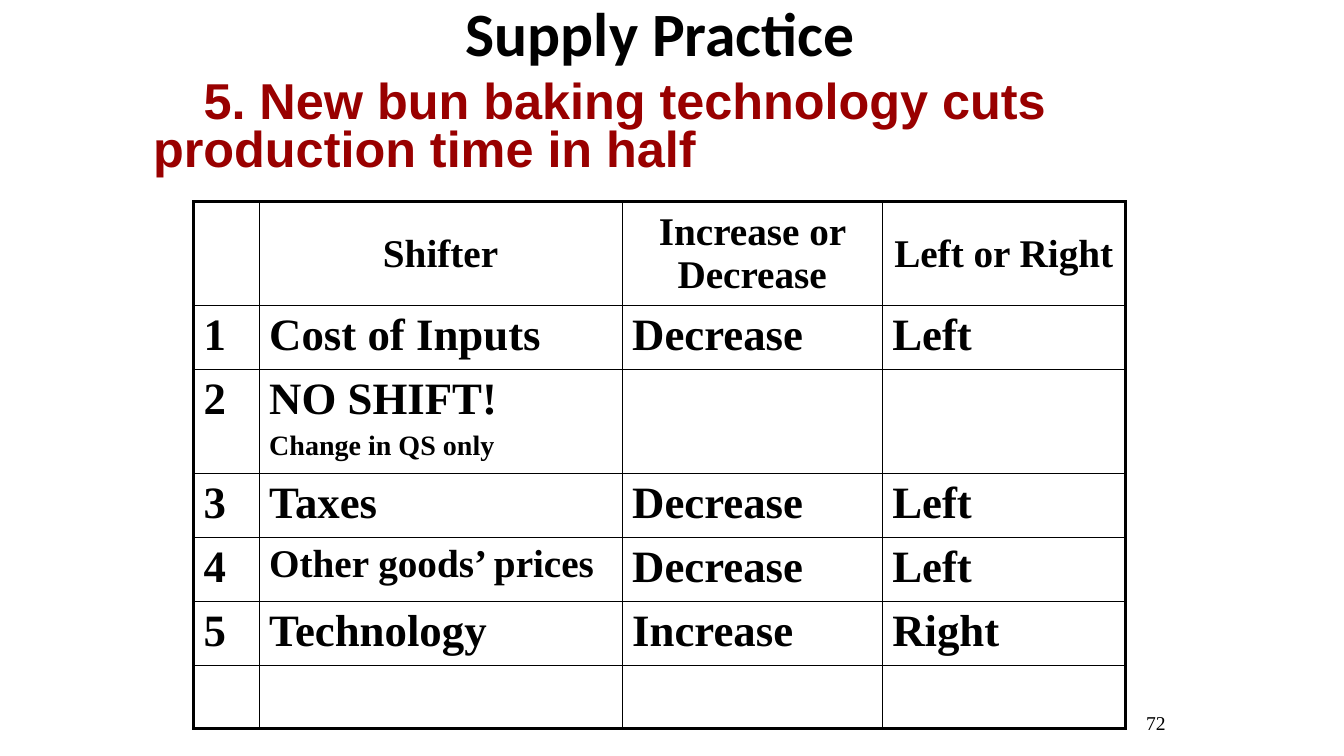
"""Build the Supply Practice slide with its table of supply shifters."""
from dataclasses import dataclass

from lxml import etree
from pptx import Presentation
from pptx.dml.color import RGBColor
from pptx.enum import text as t
from pptx.oxml import ns
from pptx.util import Inches, Pt

BLACK = RGBColor(0x00, 0x00, 0x00)
DARK_RED = RGBColor(0x99, 0x00, 0x00)
SERIF = "Times New Roman"
THIN, THICK = 1, 2.25
COLUMN_WIDTHS = (0.65, 3.6, 2.58, 2.41)
ROW_HEIGHTS = (1.03, 0.63, 1.03, 0.63, 0.63, 0.63, 0.63)
HEADINGS = ("", "Shifter", "Increase or Decrease", "Left or Right")


@dataclass(frozen=True)
class Answer:
    number: str = ""
    shifter: str = ""
    change: str = ""
    direction: str = ""
    shifter_size: float = 32
    remark: str = ""


ANSWERS = (
    Answer("1", "Cost of Inputs", "Decrease", "Left"),
    Answer("2", "NO SHIFT!", remark="Change in QS only"),
    Answer("3", "Taxes", "Decrease", "Left"),
    Answer("4", "Other goods’ prices", "Decrease", "Left", shifter_size=28),
    Answer("5", "Technology", "Increase", "Right"),
    Answer(),
)


def add_run(paragraph, wording: str, size: float, font: str = SERIF,
            color: RGBColor = BLACK, bold: bool = True) -> None:
    run = paragraph.add_run()
    run.text = wording
    run.font.size = Pt(size)
    run.font.name = font
    run.font.bold = bold
    run.font.color.rgb = color


def add_textbox(slide, left: float, top: float, width: float, height: float):
    frame = slide.shapes.add_textbox(
        Inches(left), Inches(top), Inches(width), Inches(height)).text_frame
    frame.word_wrap = True
    return frame


def set_borders(cell, widths: dict[str, float]) -> None:
    properties = cell._tc.get_or_add_tcPr()
    for position, (side, width) in enumerate(widths.items()):
        line = etree.Element(ns.qn(f"a:ln{side}"), w=str(Pt(width)))
        fill = etree.SubElement(line, ns.qn("a:solidFill"))
        etree.SubElement(fill, ns.qn("a:srgbClr"), val=str(BLACK))
        properties.insert(position, line)


def add_title(slide) -> None:
    title = slide.shapes.title
    title.left, title.top = Inches(4.57), Inches(-0.26)
    title.width, title.height = Inches(8.5), Inches(1.25)
    frame = title.text_frame
    frame.word_wrap = True
    frame.vertical_anchor = t.MSO_ANCHOR.MIDDLE
    frame.margin_left = frame.margin_right = Inches(0.05)
    frame.margin_top = frame.margin_bottom = Inches(0.05)
    heading = frame.paragraphs[0]
    heading.alignment = t.PP_ALIGN.LEFT
    heading.line_spacing = 0.9
    add_run(heading, "Supply Practice", 44, "Calibri")


def add_question(slide) -> None:
    question = add_textbox(slide, 1.42, 0.75, 10.25, 1.07).paragraphs[0]
    question.line_spacing = 0.8
    indents = question._p.get_or_add_pPr()
    indents.set("marL", "0")
    indents.set("indent", str(Inches(0.5)))
    add_run(question, "5. New bun baking technology cuts production time in half",
            36, "Arial", DARK_RED)


def add_page_number(slide) -> None:
    page_number = add_textbox(slide, 9.58, 7, 2.08, 0.5).paragraphs[0]
    page_number.alignment = t.PP_ALIGN.RIGHT
    add_run(page_number, "72", 14, bold=False)


def add_answer_table(slide) -> None:
    last_row, last_column = len(ROW_HEIGHTS) - 1, len(COLUMN_WIDTHS) - 1
    table = slide.shapes.add_table(
        last_row + 1, last_column + 1, Inches(1.92), Inches(2),
        Inches(sum(COLUMN_WIDTHS)), Inches(sum(ROW_HEIGHTS))).table
    table.first_row = table.horz_banding = False
    for column, width in zip(table.columns, COLUMN_WIDTHS):
        column.width = Inches(width)
    for row, height in zip(table.rows, ROW_HEIGHTS):
        row.height = Inches(height)

    for r in range(last_row + 1):
        for c in range(last_column + 1):
            cell = table.cell(r, c)
            cell.fill.background()
            set_borders(cell, {
                "L": THICK if c == 0 else THIN,
                "R": THICK if c == last_column else THIN,
                "T": THICK if r == 0 else THIN,
                "B": THICK if r == last_row else THIN,
            })

    for c, heading in enumerate(HEADINGS):
        if heading:
            cell = table.cell(0, c)
            cell.vertical_anchor = t.MSO_ANCHOR.MIDDLE
            paragraph = cell.text_frame.paragraphs[0]
            paragraph.alignment = t.PP_ALIGN.CENTER
            add_run(paragraph, heading, 28)

    for r, answer in enumerate(ANSWERS, start=1):
        entries = ((answer.number, 32), (answer.shifter, answer.shifter_size),
                   (answer.change, 32), (answer.direction, 32))
        for c, (wording, size) in enumerate(entries):
            if wording:
                add_run(table.cell(r, c).text_frame.paragraphs[0], wording, size)
        if answer.remark:
            remark = table.cell(r, 1).text_frame.add_paragraph()
            remark.space_before = Pt(4)
            add_run(remark, answer.remark, 20)


def main() -> None:
    deck = Presentation()
    deck.slide_width, deck.slide_height = Inches(13.33), Inches(7.5)
    slide = deck.slides.add_slide(deck.slide_layouts[5])
    add_title(slide)
    add_question(slide)
    add_page_number(slide)
    add_answer_table(slide)
    deck.save("out.pptx")


if __name__ == "__main__":
    main()
